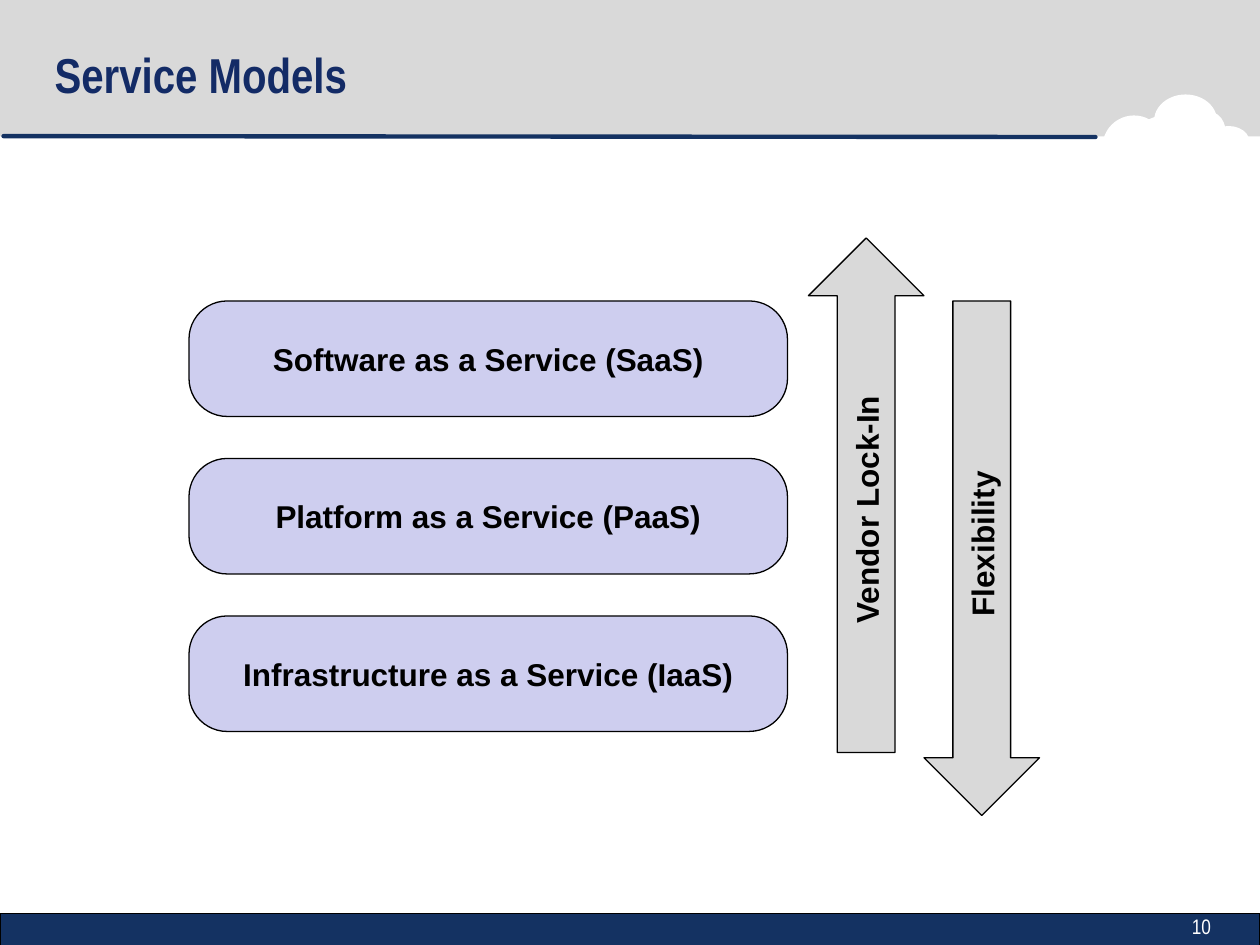
from lxml.etree import SubElement
from pptx import Presentation
from pptx.dml.color import RGBColor
from pptx.enum.shapes import MSO_CONNECTOR, MSO_SHAPE as Preset
from pptx.enum.text import MSO_ANCHOR as Anchor, MSO_AUTO_SIZE as AutoSize, PP_ALIGN as Align
from pptx.oxml.ns import qn
from pptx.util import Pt

COLORS = {
    "navy": "143262",
    "title": "132B66",
    "gray": "D9D9D9",
    "lavender": "CECEEF",
    "white": "FFFFFF",
    "black": "000000",
}
FONTS = {
    "title": {"name": "Arial Narrow", "size": Pt(28), "bold": True},
    "number": {"name": "Arial Narrow", "size": Pt(12), "bold": False},
    "label": {"name": "Arial", "size": Pt(18), "bold": True},
}


def rgb(color):
    return RGBColor.from_string(COLORS[color])


class SlideBuilder:
    def __init__(self, deck):
        self.slide = deck.slides.add_slide(deck.slide_layouts[5])
        self.shapes = self.slide.shapes

    def fill_text(self, frame, text, style, color, align, anchor, wrap):
        frame_format = {"auto_size": AutoSize.NONE, "word_wrap": wrap, "vertical_anchor": anchor}
        for key, value in frame_format.items():
            setattr(frame, key, value)
        paragraph = frame.paragraphs[0]
        paragraph.alignment = align
        run = paragraph.add_run()
        run.text = text
        for key, value in FONTS[style].items():
            setattr(run.font, key, value)
        run.font.color.rgb = rgb(color)

    def title(self, text, left, top, width, height):
        title = self.shapes.title
        place = {"left": left, "top": top, "width": width, "height": height}
        for key, value in place.items():
            setattr(title, key, Pt(value))
        self.fill_text(title.text_frame, text, "title", "title", Align.LEFT, Anchor.MIDDLE, True)
        # Bring the title in front of the header band
        self.shapes._spTree.append(title._element)

    def shape(self, preset, left, top, width, height, fill, outlined=False):
        shape = self.shapes.add_shape(preset, Pt(left), Pt(top), Pt(width), Pt(height))
        shape.shadow.inherit = False
        shape.fill.solid()
        shape.fill.fore_color.rgb = rgb(fill)
        if outlined:
            shape.line.color.rgb = rgb("black")
            shape.line.width = Pt(0.75)
        else:
            shape.line.fill.background()
        return shape

    def labelled(self, preset, text, left, top, width, height, fill):
        shape = self.shape(preset, left, top, width, height, fill, outlined=True)
        self.fill_text(shape.text_frame, text, "label", "black", Align.CENTER, Anchor.MIDDLE, False)
        return shape

    def arrow(self, text, left, top, direction, rotation=0):
        """Add an up arrow whose label runs along the shaft."""
        arrow = self.labelled(Preset.UP_ARROW, text, left, top, 66, 294, "gray")
        arrow.rotation = rotation
        arrow.text_frame._txBody.bodyPr.set("vert", direction)

    def rule(self, x1, y1, x2, y2, color, weight):
        rule = self.shapes.add_connector(MSO_CONNECTOR.STRAIGHT, Pt(x1), Pt(y1), Pt(x2), Pt(y2))
        rule.line.color.rgb = rgb(color)
        rule.line.width = Pt(weight)
        rule.line._ln.set("cap", "rnd")
        SubElement(rule._element.spPr, qn("a:effectLst"))

    def text(self, text, left, top, width, height, style, color):
        box = self.shapes.add_textbox(Pt(left), Pt(top), Pt(width), Pt(height))
        self.fill_text(box.text_frame, text, style, color, Align.LEFT, Anchor.TOP, True)


def main():
    deck = Presentation()
    deck.slide_width, deck.slide_height = Pt(720), Pt(540)
    page = SlideBuilder(deck)

    page.shape(Preset.RECTANGLE, 0, 0, 720, 78, "gray")
    cloud_puffs = [
        (682.5, 64, 18, 24),
        (648, 66, 36, 30),
        (630, 66, 36, 36),
        (690, 72, 24, 18),
        (659.5, 54, 36, 30),
    ]
    for puff in cloud_puffs:
        page.shape(Preset.OVAL, *puff, "white")
    page.rule(2, 77.8, 626, 78.3, "navy", 2.5)
    page.shape(Preset.RECTANGLE, 0, 522, 720, 18.5, "navy", outlined=True)
    page.text("10", 674, 518.5, 46, 21.6, "number", "white")
    page.title("Service Models", 24, 6, 600, 72)

    models = [
        "Software as a Service (SaaS)",
        "Platform as a Service (PaaS)",
        "Infrastructure as a Service (IaaS)",
    ]
    stack_top, pitch = 172, 90
    for row, model in enumerate(models):
        box = page.labelled(Preset.ROUNDED_RECTANGLE, model,
                            108, stack_top + row * pitch, 342, 66, "lavender")
        box.adjustments[0] = 0.33

    page.arrow("Vendor Lock-In", 462, 136, "vert270")
    page.arrow("Flexibility", 528, stack_top, "vert", rotation=180)

    deck.save("out.pptx")


if __name__ == "__main__":
    main()
